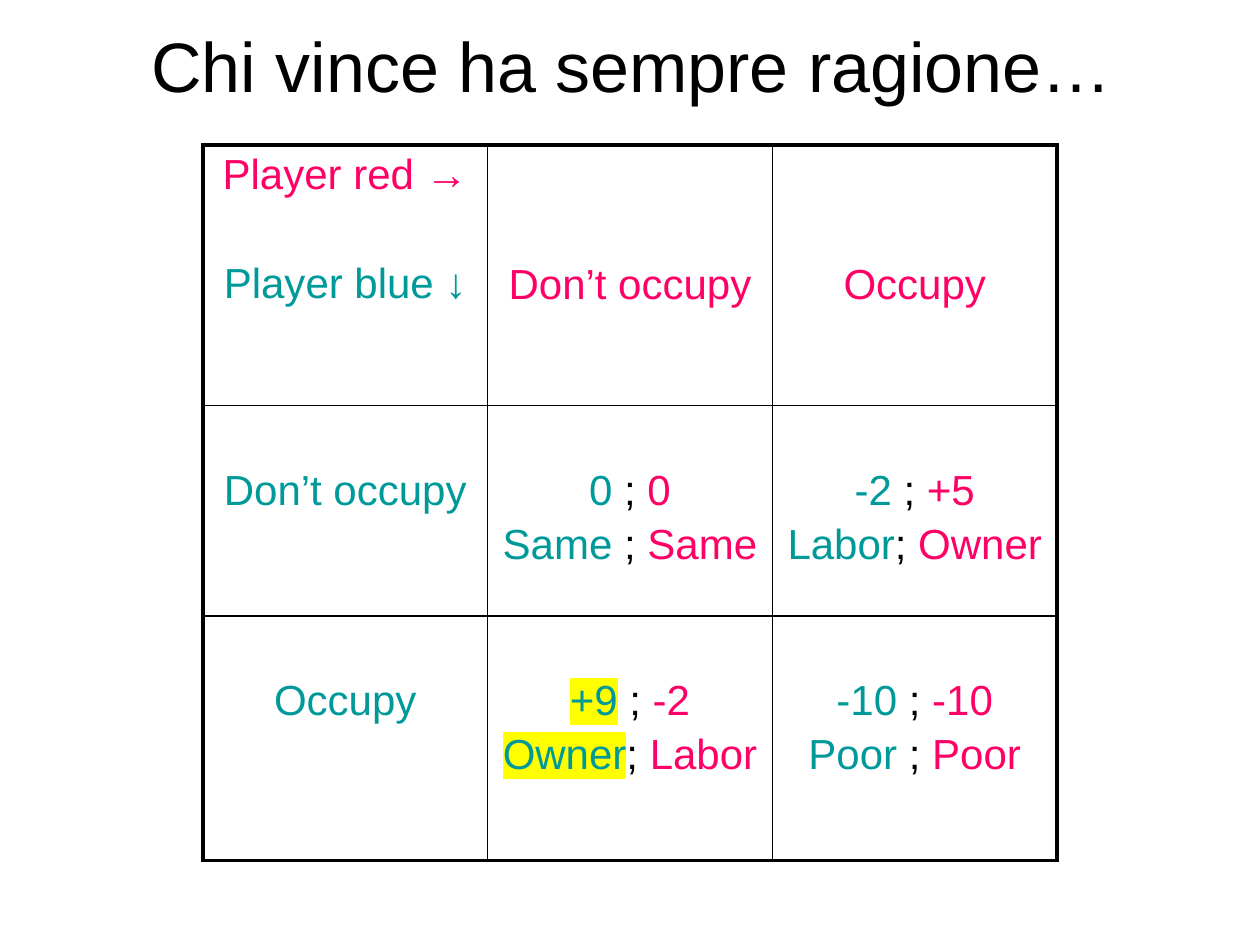
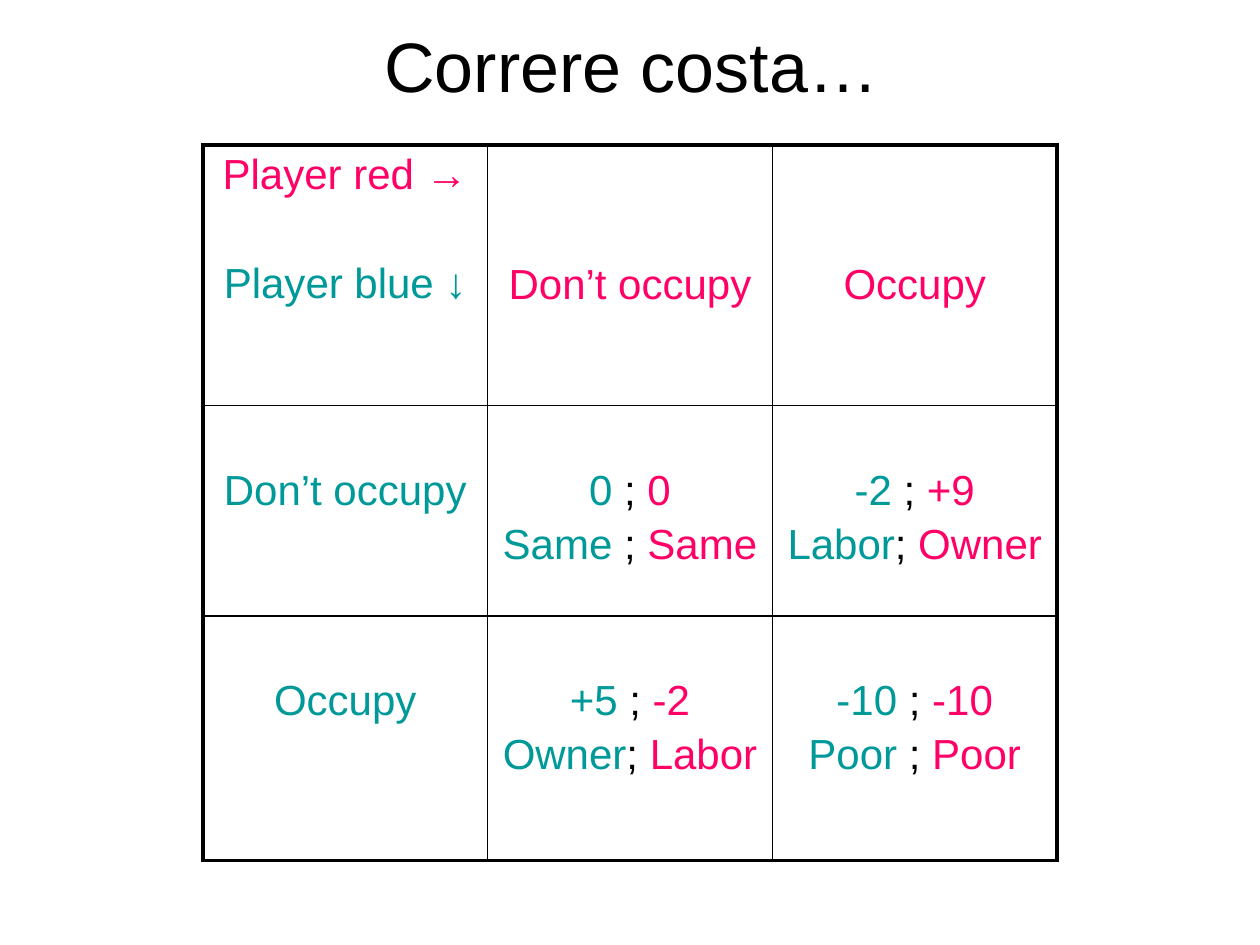
"""Build two slides that each show a payoff matrix for the occupation game."""
from lxml.etree import SubElement
from pptx import Presentation
from pptx.dml.color import RGBColor as Color
from pptx.enum.text import MSO_AUTO_SIZE as AutoSize, PP_ALIGN as Align
from pptx.oxml.ns import qn
from pptx.util import Pt

COLORS = {"black": "000000", "red": "FF0066", "blue": "009999", "yellow": "FFFF00"}
FONT = "Arial"
TABLE_LEFT, TABLE_TOP = 115.92, 82.8
COLUMN_WIDTH = 162.72
ROW_HEIGHTS = (149.04, 120.24, 139.68)
TEXT_SIZE, LINE_PITCH, LINE_GAP = 24, 31.6, 4.1
INSET = 3.6
OUTER_BORDER, INNER_BORDER = 2.25, 1


def add_span(para, text, size=TEXT_SIZE, color="black", highlight=None):
    """Append formatted text to a paragraph."""
    span = para.add_run()
    span.text = text
    span.font.size = Pt(size)
    span.font.name = FONT
    span.font.color.rgb = Color.from_string(COLORS[color])
    if highlight:
        props = span.font._element
        mark = SubElement(props, qn("a:highlight"))
        SubElement(mark, qn("a:srgbClr"), val=COLORS[highlight])
        props.find(qn("a:solidFill")).addnext(mark)


def add_title(page, text):
    """Add the centred slide title."""
    box = page.shapes.add_textbox(Pt(0), Pt(9.36), Pt(721.44), Pt(55.44))
    frame = box.text_frame
    frame.word_wrap = True
    frame.auto_size = AutoSize.SHAPE_TO_FIT_TEXT
    para = frame.paragraphs[0]
    para.alignment = Align.CENTER
    add_span(para, text, size=40)


def set_borders(cell, row, column):
    """Draw thick lines on the table's outside and thin lines inside it."""
    outside = {"L": column == 0, "R": column == 2, "T": row == 0, "B": row == 2}
    for side, is_outer in outside.items():
        width = OUTER_BORDER if is_outer else INNER_BORDER
        line = SubElement(cell._tc.get_or_add_tcPr(), qn(f"a:ln{side}"), w=str(Pt(width)))
        fill = SubElement(line, qn("a:solidFill"))
        SubElement(fill, qn("a:srgbClr"), val=COLORS["black"])


def fill_cell(cell, lines, skip=1, gap=LINE_GAP):
    """Write lines of (text, color, highlight) spans below a number of skipped lines."""
    cell.margin_top = Pt(INSET + skip * LINE_PITCH)
    cell.margin_bottom = Pt(INSET)
    frame = cell.text_frame
    for index, spans in enumerate(lines):
        para = frame.add_paragraph() if index else frame.paragraphs[0]
        para.alignment = Align.CENTER
        para.space_before = Pt(gap if index else 0)
        for text, color, highlight in spans:
            add_span(para, text, color=color, highlight=highlight)


def label(text, color):
    """Return a line of one colour."""
    return [(text, color, None)]


def pair(blue, red, separator=" ; ", highlight=None):
    """Return a line with the blue and the red player's outcome."""
    return [(blue, "blue", highlight), (separator, "black", None), (red, "red", None)]


def add_matrix(page, win, loss_to, highlight=None):
    """Add the payoff matrix with the blue and the red player's winning payoff."""
    table = page.shapes.add_table(
        3, 3, Pt(TABLE_LEFT), Pt(TABLE_TOP), Pt(3 * COLUMN_WIDTH), Pt(sum(ROW_HEIGHTS))
    ).table
    table.first_row = table.horz_banding = False
    for column in table.columns:
        column.width = Pt(COLUMN_WIDTH)
    for row, height in zip(table.rows, ROW_HEIGHTS):
        row.height = Pt(height)
    for row in range(3):
        for column in range(3):
            cell = table.cell(row, column)
            set_borders(cell, row, column)
            cell.fill.background()

    players = [label("Player red →", "red"), label("Player blue ↓", "blue")]
    fill_cell(table.cell(0, 0), players, skip=0, gap=LINE_GAP + LINE_PITCH)
    for index, choice in enumerate(("Don’t occupy", "Occupy"), start=1):
        fill_cell(table.cell(0, index), [label(choice, "red")], skip=2)
        fill_cell(table.cell(index, 0), [label(choice, "blue")])

    outcomes = {
        (1, 1): [pair("0", "0"), pair("Same", "Same")],
        (1, 2): [pair("-2", loss_to), pair("Labor", "Owner", "; ")],
        (2, 1): [
            pair(win, "-2", highlight=highlight),
            pair("Owner", "Labor", "; ", highlight),
        ],
        (2, 2): [pair("-10", "-10"), pair("Poor", "Poor")],
    }
    for (row, column), lines in outcomes.items():
        fill_cell(table.cell(row, column), lines)


def main():
    """Build and save the deck."""
    deck = Presentation()
    deck.slide_width, deck.slide_height = Pt(720), Pt(540)
    games = (
        ("Chi vince ha sempre ragione…", "+9", "+5", "yellow"),
        ("Correre costa…", "+5", "+9", None),
    )
    for title, blue_win, red_win, highlight in games:
        page = deck.slides.add_slide(deck.slide_layouts[6])
        add_matrix(page, blue_win, red_win, highlight)
        add_title(page, title)
    deck.save("out.pptx")


if __name__ == "__main__":
    main()
